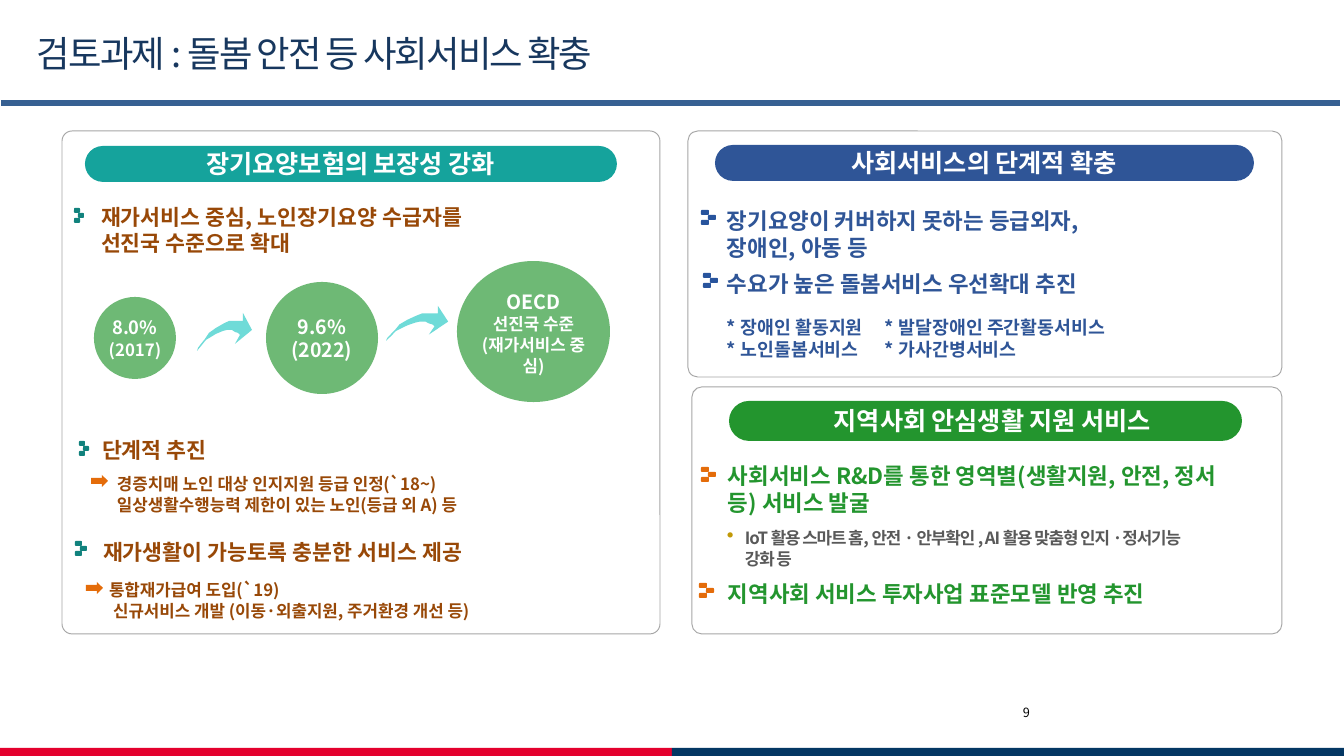
from pptx import Presentation
from pptx.dml.color import RGBColor
from pptx.enum.shapes import MSO_CONNECTOR, MSO_SHAPE
from pptx.enum.text import MSO_ANCHOR, PP_ALIGN
from pptx.oxml.ns import qn
from pptx.util import Emu, Pt
from lxml import etree

PX = 914400 / 134.4
FONT = "Noto Sans CJK KR"
RECT, ROUND = MSO_SHAPE.RECTANGLE, MSO_SHAPE.ROUNDED_RECTANGLE
OVAL, ARROW = MSO_SHAPE.OVAL, MSO_SHAPE.RIGHT_ARROW
LINE = MSO_CONNECTOR.STRAIGHT
LEFT, MID = PP_ALIGN.LEFT, PP_ALIGN.CENTER
TOP, HALF = MSO_ANCHOR.TOP, MSO_ANCHOR.MIDDLE

WHITE, BLACK = RGBColor(255, 255, 255), RGBColor(0, 0, 0)
NAVY, RULE = RGBColor(0x17, 0x37, 0x5E), RGBColor(0x37, 0x60, 0x92)
RED, DEEP = RGBColor(0xE4, 0x01, 0x2E), RGBColor(0x04, 0x37, 0x63)
GRAY, DARK = RGBColor(0xA6, 0xA6, 0xA6), RGBColor(0x59, 0x59, 0x59)
TEAL, PINE = RGBColor(0x15, 0xA3, 0x9C), RGBColor(0x11, 0x82, 0x7D)
BLUE, ROYAL = RGBColor(0x2F, 0x55, 0x97), RGBColor(0x28, 0x54, 0x9D)
GREEN, AQUA = RGBColor(0x23, 0x95, 0x2E), RGBColor(0x6F, 0xDB, 0xD8)
BROWN, ORANGE = RGBColor(0x98, 0x48, 0x07), RGBColor(0xE4, 0x6C, 0x0A)
GOLD = RGBColor(0xC1, 0x99, 0x07)

TITLE = "검토과제 : 돌봄 안전 등 사회서비스 확충"
# box, corner ratio
PANELS = [((62, 131, 598, 503), 0.02), ((688, 131, 594, 246), 0.04),
          ((692, 387, 590, 247), 0.04)]
# text, box, fill, left inset
HEADS = [("장기요양보험의 보장성 강화", (85, 146, 532, 36), TEAL, 0),
         ("사회서비스의 단계적 확충", (715, 145, 539, 36), BLUE, 0),
         ("지역사회 안심생활 지원 서비스", (729, 401, 513, 40), GREEN, 14)]
# box, then text, size, line pitch per line
GOALS = [((94, 297, 82, 82), [("8.0%", 9.8, 22), ("(2017)", 9, 21)]),
         ((266, 282, 112, 112), [("9.6%", 10.5, 24), ("(2022)", 10.5, 24)]),
         ((457, 261, 153, 141), [("OECD", 10.5, 26), ("선진국 수준", 9, 21),
                                 ("(재가서비스 중\n심)", 9, 21)])]
SWOOSH = [(46, 0), (55, 17), (38, 31), (43, 22), (41, 20), (38, 19), (35, 17),
          (30, 17), (26, 18), (19, 21), (9, 27), (5, 32), (0, 38), (1, 35),
          (4, 31), (8, 26), (12, 20), (19, 15), (26, 11), (32, 8), (42, 8),
          (46, 8)]
SWEEPS = [(197, 313, 1, 1), (386, 306, 1.13, 0.92)]  # left, top, scales
# left, top, width, colour, then text, size, pitch, space before, indent
BLOCKS = [
    (101, 204, 460, BROWN, [
        ("재가서비스 중심, 노인장기요양 수급자를\n선진국 수준으로 확대", 11.6, 26, 0, 0)]),
    (102, 437, 500, BROWN, [
        ("단계적 추진", 11.6, 26, 0, 0),
        ("경증치매 노인 대상 인지지원 등급 인정(`18~)", 9, 21, 10, 15),
        ("일상생활수행능력 제한이 있는 노인(등급 외 A) 등", 9, 21, 0, 15)]),
    (103, 539, 500, BROWN, [
        ("재가생활이 가능토록 충분한 서비스 제공", 11.6, 26, 0, 0),
        ("통합재가급여 도입(`19)", 9, 21, 14, 6),
        ("신규서비스 개발 (이동·외출지원, 주거환경 개선 등)", 9, 21, 0, 10)]),
    (727, 207, 520, BLUE, [
        ("장기요양이 커버하지 못하는 등급외자,\n장애인, 아동 등", 12, 27, 0, 0),
        ("수요가 높은 돌봄서비스 우선확대 추진", 12, 27, 9, 0),
        ("* 장애인 활동지원\t* 발달장애인 주간활동서비스", 9.8, 22, 19, 0),
        ("* 노인돌봄서비스\t* 가사간병서비스", 9.8, 22, 0, 0)]),
    (728, 462, 560, GREEN, [
        ("사회서비스 R&D를 통한 영역별(생활지원, 안전, 정서\n등) 서비스 발굴", 12, 27, 0, 0),
        ("지역사회 서비스 투자사업 표준모델 반영 추진", 12, 27, 64, 0)]),
]
NOTE = "IoT 활용 스마트 홈, 안전 · 안부확인 , AI 활용 맞춤형 인지 ·정서기능\n강화 등"
# left, top, tile width, step, colour
MARKS = [(74, 208, 6, 4, PINE), (79, 441, 6, 4, PINE), (75, 541, 7, 5, PINE),
         (701, 210, 8, 7, ROYAL), (703, 273, 8, 7, ROYAL),
         (701, 467, 8, 7, ORANGE), (699, 583, 8, 7, ORANGE)]
POINTERS = [(91, 475), (86, 582)]


def px(n):
    return Emu(round(n * PX))


def paint(item, fill):
    """Give a flat fill without line or shadow."""
    item.shadow.inherit = False
    item.fill.solid()
    item.fill.fore_color.rgb = fill
    item.line.fill.background()


def shape(kind, box, fill, adj=None):
    item = slide.shapes.add_shape(kind, *map(px, box))
    paint(item, fill)
    if adj is not None:
        item.adjustments[0] = adj
    return item


def frame(item, wrap, anchor):
    tf = item.text_frame
    tf.margin_left = tf.margin_right = tf.margin_top = tf.margin_bottom = 0
    tf.word_wrap = wrap
    tf.vertical_anchor = anchor
    return tf


def textbox(*box):
    return frame(slide.shapes.add_textbox(*map(px, box)), True, TOP)


def write(para, text, size, color, align=LEFT, bold=True, pitch=None, track=0):
    """Fill a paragraph, breaking the line at each newline."""
    para.alignment = align
    if pitch:
        para.line_spacing = px(pitch)
    for i, part in enumerate(text.split("\n")):
        if i:
            para.add_line_break()
        run = para.add_run()
        run.text = part
        run.font.size, run.font.bold = Pt(size), bold
        run.font.name = FONT
        run.font.color.rgb = color
        props = run._r.get_or_add_rPr()
        etree.SubElement(props, qn("a:ea"), typeface=FONT)
        if track:
            props.set("spc", str(track))


prs = Presentation()
prs.slide_width, prs.slide_height = px(1344), px(756)
slide = prs.slides.add_slide(prs.slide_layouts[5])

title = slide.shapes.title
title.left, title.top, title.width, title.height = map(px, (37, 24, 1100, 58))
write(frame(title, True, HALF).paragraphs[0], TITLE, 19.5, NAVY,
      bold=False, track=-110)

rule = slide.shapes.add_connector(LINE, *map(px, (1, 103, 1340, 103)))
rule.line.color.rgb, rule.line.width = RULE, Pt(3)
etree.SubElement(rule._element.spPr, qn("a:effectLst"))
for x, color in ((0, RED), (672, DEEP)):
    shape(RECT, (x, 748, 672, 8), color)

for box, adj in PANELS:
    panel = shape(ROUND, box, WHITE, adj)
    panel.line.color.rgb, panel.line.width = GRAY, Pt(0.5)
for text, box, fill, inset in HEADS:
    tf = frame(shape(ROUND, box, fill, 0.5), False, HALF)
    tf.margin_left = px(inset)
    write(tf.paragraphs[0], text, 13.5, WHITE, MID)

for box, lines in GOALS:
    disc = shape(OVAL, box, GREEN)
    tint = disc._element.spPr.find(qn("a:solidFill"))[0]
    etree.SubElement(tint, qn("a:alpha"), val="66000")
    tf = frame(disc, False, HALF)
    for i, (text, size, pitch) in enumerate(lines):
        para = tf.add_paragraph() if i else tf.paragraphs[0]
        write(para, text, size, WHITE, MID, pitch=pitch)

for x, y, wide, high in SWEEPS:
    pen = slide.shapes.build_freeform(*SWOOSH[0], scale=(PX * wide, PX * high))
    pen.add_line_segments(SWOOSH[1:], close=True)
    paint(pen.convert_to_shape(px(x), px(y)), AQUA)

for x, y, width, color, rows in BLOCKS:
    tall = sum(row[2] * (row[0].count("\n") + 1) + row[3] for row in rows)
    tf = textbox(x, y, width, tall)
    for i, (text, size, pitch, gap, indent) in enumerate(rows):
        para = tf.add_paragraph() if i else tf.paragraphs[0]
        write(para, text, size, color, pitch=pitch)
        if gap:
            para.space_before = px(gap)
        props = para._p.get_or_add_pPr()
        props.set("marL", str(px(indent)))
        if "\t" in text:
            tabs = etree.SubElement(props, qn("a:tabLst"))
            etree.SubElement(tabs, qn("a:tab"), pos=str(px(158)), algn="l")

para = textbox(727, 527, 550, 42).paragraphs[0]
write(para, NOTE, 9, DARK, pitch=21, track=-60)
props = para._p.get_or_add_pPr()
props.set("marL", str(px(18)))
props.set("indent", str(px(-18)))
tint = etree.SubElement(props, qn("a:buClr"))
etree.SubElement(tint, qn("a:srgbClr"), val=str(GOLD))
etree.SubElement(props, qn("a:buSzPct"), val="120000")
etree.SubElement(props, qn("a:buChar"), char="•")

for x, y, width, step, color in MARKS:
    for dx, dy in ((0, 0), (step, 5), (0, 10)):
        shape(ROUND, (x + dx, y + dy, width, 5), color, 0.22)
for x, y in POINTERS:
    shape(ARROW, (x, y, 17, 12), ORANGE)

write(textbox(1023, 705, 280, 20).paragraphs[0], "9", 6.8, BLACK, bold=False)

prs.save("out.pptx")
